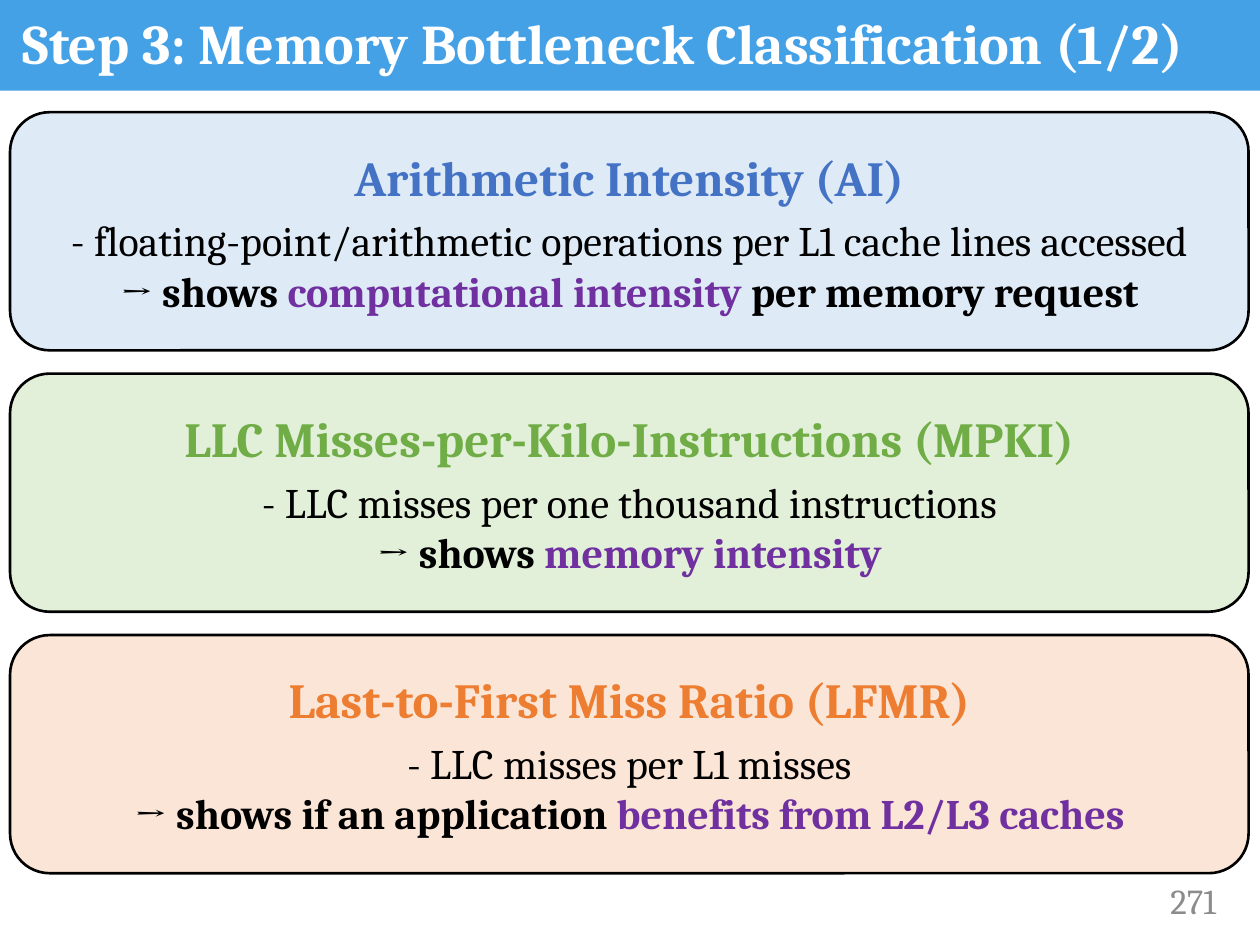
from pptx import Presentation
from pptx.dml.color import RGBColor
from pptx.enum.shapes import MSO_SHAPE
from pptx.enum.text import MSO_ANCHOR, MSO_AUTO_SIZE, PP_ALIGN
from pptx.util import Inches, Pt

RECTANGLE = MSO_SHAPE.RECTANGLE
ROUNDED = MSO_SHAPE.ROUNDED_RECTANGLE
TOP, MIDDLE = MSO_ANCHOR.TOP, MSO_ANCHOR.MIDDLE
LEFT, CENTER, RIGHT = PP_ALIGN.LEFT, PP_ALIGN.CENTER, PP_ALIGN.RIGHT
NO_AUTOFIT = MSO_AUTO_SIZE.NONE

FONT = "Cambria"
BLACK, WHITE, PURPLE = "000000", "FFFFFF", "7030A0"

# Grid: one column of equal cards
MARGIN, CARD_WIDTH = 0.08, 9.83
FIRST_CARD, CARD_HEIGHT, CARD_STEP = 0.89, 1.89, 2.075

# Fill, heading colour, heading, definition, spans of the conclusion
METRICS = [
    ("DEEBF7", "4472C4", "Arithmetic Intensity (AI)",
     "- floating-point/arithmetic operations per L1 cache lines accessed",
     [("→ shows ", BLACK), ("computational intensity ", PURPLE),
      ("per memory request", BLACK)]),
    ("E2F0D9", "70AD47", "LLC Misses-per-Kilo-Instructions (MPKI)",
     "- LLC misses per one thousand instructions",
     [("→ shows ", BLACK), ("memory intensity", PURPLE)]),
    ("FBE5D6", "ED7D31", "Last-to-First Miss Ratio (LFMR)",
     "- LLC misses per L1 misses",
     [("→ shows if an application ", BLACK),
      ("benefits from L2/L3 caches", PURPLE)]),
]


def color(hex_string):
    return RGBColor.from_string(hex_string)


def add_panel(slide, kind, left, top, width, height, fill, line=None):
    panel = slide.shapes.add_shape(
        kind, Inches(left), Inches(top), Inches(width), Inches(height))
    panel.shadow.inherit = False
    panel.fill.solid()
    panel.fill.fore_color.rgb = color(fill)
    if line:
        panel.line.color.rgb = color(line)
        panel.line.width = Pt(1.5)
    else:
        panel.line.fill.background()
    return panel


def write_paragraph(para, spans, size, align, bold=False):
    para.alignment = align
    para.font.name = FONT
    para.font.size = Pt(size)
    para.font.bold = bold
    for text, hex_string in spans:
        span = para.add_run()
        span.text = text
        span.font.color.rgb = color(hex_string)


def add_title(slide, text):
    bar = add_panel(slide, RECTANGLE, 0, 0, 10, 0.72, "45A1E6")
    title = slide.shapes.title
    title.element.addprevious(bar.element)  # keep the bar behind the title
    title.left, title.top = Inches(MARGIN), Inches(0.08)
    title.width, title.height = Inches(CARD_WIDTH), Inches(0.81)
    frame = title.text_frame
    frame.auto_size = NO_AUTOFIT
    frame.vertical_anchor = TOP
    para = frame.paragraphs[0]
    para.line_spacing = 0.9
    write_paragraph(para, [(text, WHITE)], 32, LEFT, bold=True)


def add_card(slide, row, fill, accent, heading, definition, conclusion):
    card = add_panel(slide, ROUNDED, MARGIN, FIRST_CARD + row * CARD_STEP,
                     CARD_WIDTH, CARD_HEIGHT, fill, BLACK)
    frame = card.text_frame
    frame.word_wrap = True
    frame.vertical_anchor = MIDDLE
    write_paragraph(frame.paragraphs[0], [(heading, accent)], 28, CENTER, bold=True)
    detail = frame.add_paragraph()
    detail.space_before = Pt(5)
    write_paragraph(detail, [(definition, BLACK)], 24, CENTER)
    write_paragraph(frame.add_paragraph(), conclusion, 24, CENTER, bold=True)


def add_page_number(slide, number):
    box = slide.shapes.add_textbox(
        Inches(8.67), Inches(6.95), Inches(1.08), Inches(0.4))
    frame = box.text_frame
    frame.word_wrap = True
    frame.vertical_anchor = MIDDLE
    write_paragraph(frame.paragraphs[0], [(number, "8C8C8C")], 20, RIGHT)


def main():
    deck = Presentation()
    deck.slide_width, deck.slide_height = Inches(10), Inches(7.5)
    slide = deck.slides.add_slide(deck.slide_layouts[5])

    add_title(slide, "Step 3: Memory Bottleneck Classification (1/2)")
    for row, metric in enumerate(METRICS):
        add_card(slide, row, *metric)
    add_page_number(slide, "271")

    deck.save("out.pptx")


if __name__ == "__main__":
    main()
